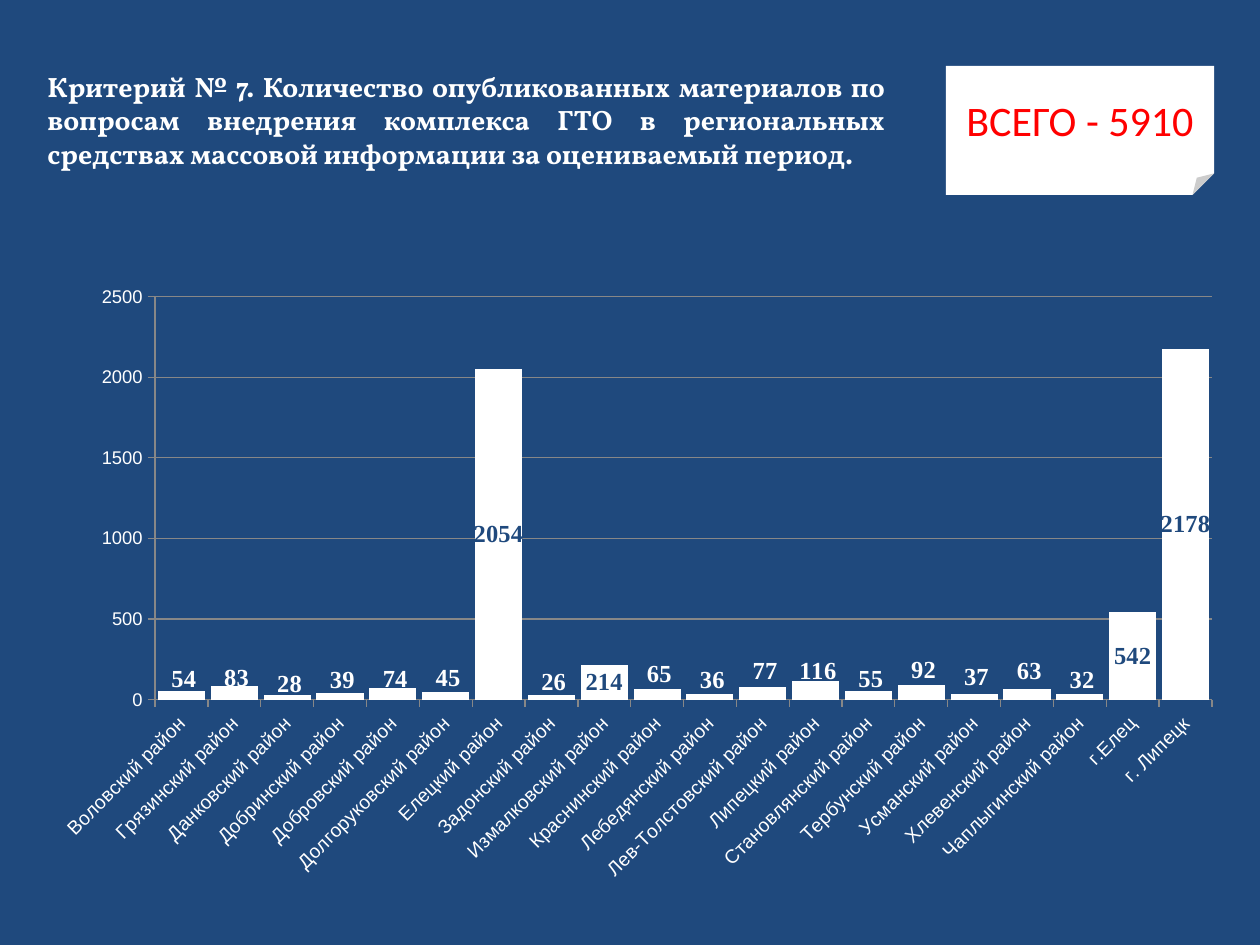
from lxml.etree import SubElement
from pptx import Presentation
from pptx.chart.data import CategoryChartData
from pptx.dml.color import RGBColor
from pptx.enum.chart import XL_CHART_TYPE, XL_LABEL_POSITION, XL_TICK_MARK
from pptx.enum.shapes import MSO_SHAPE
from pptx.enum.text import MSO_ANCHOR, PP_ALIGN
from pptx.oxml import parse_xml
from pptx.oxml.ns import nsdecls, qn
from pptx.util import Emu, Pt

PIXEL = 914400 / 126
NAVY, WHITE, RED, GRAY = "1F497D", "FFFFFF", "FF0000", "878787"


def box(*pixels):
    return [Emu(round(value * PIXEL)) for value in pixels]


def write(shape, text, font, size, color, bold=False, align=PP_ALIGN.LEFT,
          anchor=MSO_ANCHOR.TOP):
    frame = shape.text_frame
    frame.word_wrap = True
    frame.vertical_anchor = anchor
    paragraph = frame.paragraphs[0]
    paragraph.alignment = align
    run = paragraph.add_run()
    run.text = text
    run.font.name, run.font.size, run.font.bold = font, Pt(size), bold
    run.font.color.rgb = RGBColor.from_string(color)


presentation = Presentation()
presentation.slide_width, presentation.slide_height = box(1260, 945)
slide = presentation.slides.add_slide(presentation.slide_layouts[6])
slide.background.fill.solid()
slide.background.fill.fore_color.rgb = RGBColor.from_string(NAVY)

# Heading
heading = slide.shapes.add_textbox(*box(35, 63, 863, 115))
write(heading, "Критерий № 7. Количество опубликованных материалов по вопросам "
      "внедрения комплекса ГТО в региональных средствах массовой информации "
      "за оцениваемый период.", "Vollkorn", 16, WHITE, bold=True,
      align=PP_ALIGN.JUSTIFY)

# Total note
note = slide.shapes.add_shape(MSO_SHAPE.FOLDED_CORNER, *box(946, 66, 268, 129))
note.shadow.inherit = False
note.fill.solid()
note.fill.fore_color.rgb = RGBColor.from_string(WHITE)
note.line.fill.background()
write(note, "ВСЕГО - 5910", "Calibri", 24, RED, align=PP_ALIGN.CENTER,
      anchor=MSO_ANCHOR.MIDDLE)

# Chart data
materials = {
    "Воловский район": 54, "Грязинский район": 83, "Данковский район": 28,
    "Добринский район": 39, "Добровский район": 74, "Долгоруковский район": 45,
    "Елецкий район": 2054, "Задонский район": 26, "Измалковский район": 214,
    "Краснинский район": 65, "Лебедянский район": 36,
    "Лев-Толстовский район": 77, "Липецкий район": 116,
    "Становлянский район": 55, "Тербунский район": 92, "Усманский район": 37,
    "Хлевенский район": 63, "Чаплыгинский район": 32, "г.Елец": 542,
    "г. Липецк": 2178,
}
chart_data = CategoryChartData(number_format="0")
chart_data.categories = list(materials)
chart_data.add_series("Series 1", list(materials.values()))
chart_height = 620
chart = slide.shapes.add_chart(XL_CHART_TYPE.COLUMN_STACKED,
                               *box(35, 275, 1201, chart_height), chart_data).chart
chart.has_legend = False
chart.has_title = False
chart.font.name, chart.font.size = "Times New Roman", Pt(14)

# Plot area and chart background
plot_area = chart._chartSpace.chart.plotArea
for old_layout in plot_area.findall(qn("c:layout")):
    plot_area.remove(old_layout)
plot_area.insert(0, parse_xml(
    f'<c:layout {nsdecls("c")}><c:manualLayout><c:layoutTarget val="inner"/>'
    '<c:xMode val="edge"/><c:yMode val="edge"/><c:x val="0.1"/>'
    '<c:y val="0.035"/><c:w val="0.88"/><c:h val="0.65"/>'
    '</c:manualLayout></c:layout>'))
background = (f'<c:spPr {nsdecls("c", "a")}><a:solidFill><a:srgbClr val="{NAVY}"/>'
              '</a:solidFill><a:ln><a:noFill/></a:ln></c:spPr>')
plot_area.append(parse_xml(background))
chart._chartSpace.chart.addnext(parse_xml(background))

# Axes
category_axis, value_axis = chart.category_axis, chart.value_axis
for axis, size in ((category_axis, 11), (value_axis, 10.5)):
    font = axis.tick_labels.font
    font.name, font.size = "Arial", Pt(size)
    font.color.rgb = RGBColor.from_string(WHITE)
    axis.major_tick_mark = XL_TICK_MARK.OUTSIDE
    axis.format.line.color.rgb = RGBColor.from_string(GRAY)
value_axis.minimum_scale, value_axis.maximum_scale = 0, 2500
value_axis.major_unit = 500
value_axis.major_gridlines.format.line.color.rgb = RGBColor.from_string(GRAY)
category_axis._element.find(qn("c:txPr")).find(qn("a:bodyPr")).set("rot", "-2700000")

# Columns
plot = chart.plots[0]
plot.gap_width, plot.overlap, plot.vary_by_categories = 12, 100, False
series = plot.series[0]
series.format.fill.solid()
series.format.fill.fore_color.rgb = RGBColor.from_string(WHITE)
labels = series.data_labels
labels.show_value = True
labels.number_format, labels.number_format_is_linked = "0", False
labels.position = XL_LABEL_POSITION.CENTER
labels.font.name, labels.font.size, labels.font.bold = "Times New Roman", Pt(14), True
labels.font.color.rgb = RGBColor.from_string(NAVY)

# Labels of low columns stand above them: label height over the base line
label_heights = {0: 21, 1: 22, 2: 16, 3: 20, 4: 21, 5: 22, 7: 18, 9: 26, 10: 20,
                 11: 29, 12: 29, 13: 21, 14: 30, 15: 23, 16: 29, 17: 20}
values = list(materials.values())
for index, height in label_heights.items():
    label = series.points[index].data_label
    label.font.name, label.font.size, label.font.bold = "Times New Roman", Pt(14), True
    label.font.color.rgb = RGBColor.from_string(WHITE)
    column_middle = values[index] / 2500 * 0.65 * chart_height / 2
    element = labels._element.find(f'{qn("c:dLbl")}[{qn("c:idx")}][@val]')
    element = next(item for item in labels._element.findall(qn("c:dLbl"))
                   if item.find(qn("c:idx")).get("val") == str(index))
    layout = parse_xml(f'<c:layout {nsdecls("c")}/>')
    manual = SubElement(layout, qn("c:manualLayout"))
    SubElement(manual, qn("c:x")).set("val", "0.002")
    SubElement(manual, qn("c:y")).set(
        "val", f"{(column_middle - height) / chart_height:.4f}")
    element.insert(1, layout)

presentation.save("out.pptx")
